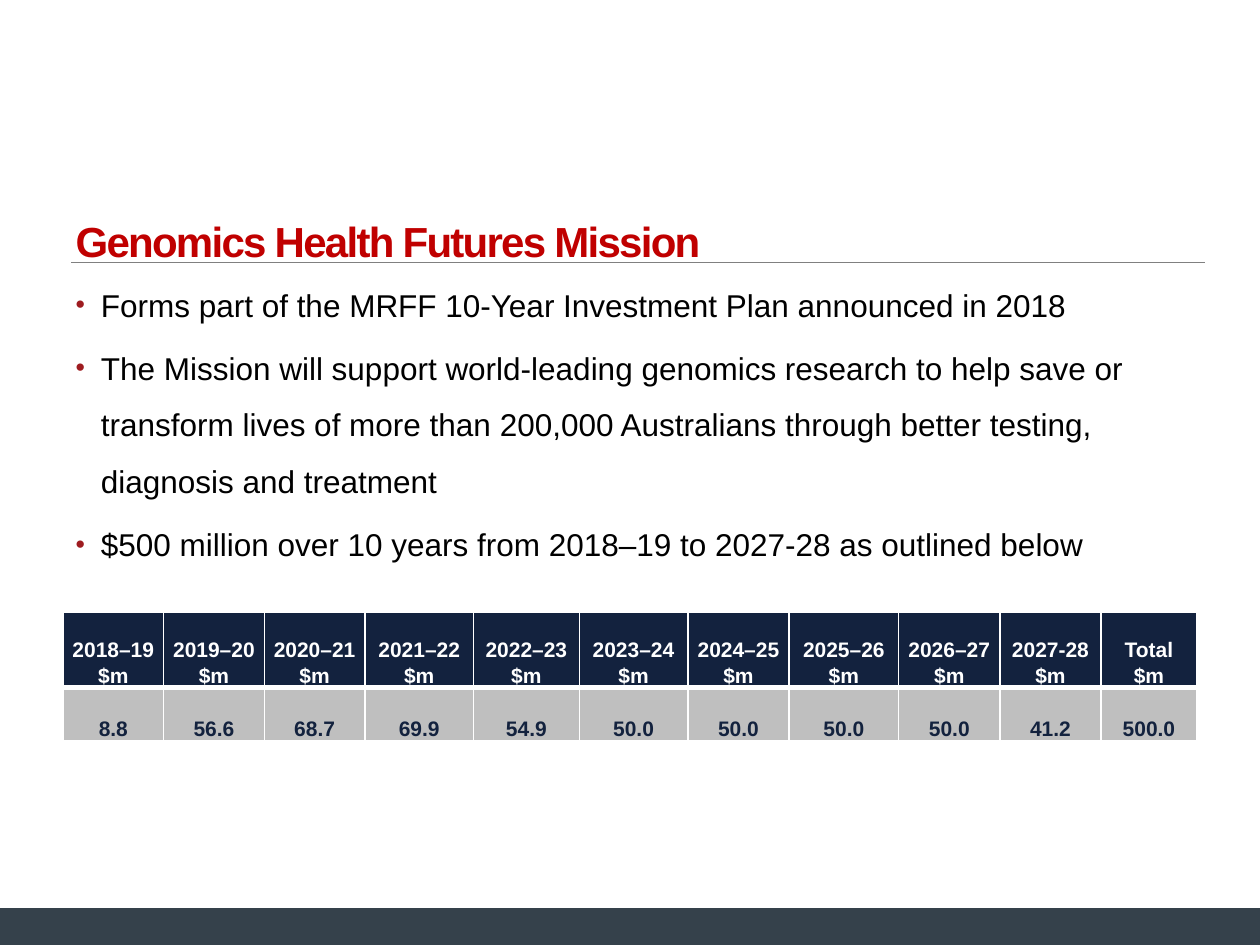
"""Build the Genomics Health Futures Mission funding slide."""
from lxml.etree import SubElement
from pptx import Presentation
from pptx.dml.color import RGBColor
from pptx.enum.shapes import MSO_CONNECTOR, MSO_SHAPE
from pptx.enum.text import MSO_ANCHOR, MSO_AUTO_SIZE, PP_ALIGN
from pptx.oxml.ns import qn
from pptx.util import Cm, Pt

NAVY = RGBColor(0x13, 0x22, 0x3E)
RED = RGBColor(0xC0, 0x00, 0x00)
SLATE = RGBColor(0x35, 0x41, 0x4B)
GREY = RGBColor(0x80, 0x80, 0x80)
SILVER = RGBColor(0xBF, 0xBF, 0xBF)
WHITE = RGBColor(0xFF, 0xFF, 0xFF)
BLACK = RGBColor(0x00, 0x00, 0x00)
BULLET_RED = RGBColor(0x9E, 0x1C, 0x20)

TITLE = "Genomics Health Futures Mission"
POINTS = [
    "Forms part of the MRFF 10-Year Investment Plan announced in 2018",
    "The Mission will support world-leading genomics research to help save or "
    "transform lives of more than 200,000 Australians through better testing, "
    "diagnosis and treatment",
    "$500 million over 10 years from 2018–19 to 2027-28 as outlined below",
]
FUNDING = [
    ("2018–19", "8.8", 2.03),
    ("2019–20", "56.6", 2.03),
    ("2020–21", "68.7", 2.03),
    ("2021–22", "69.9", 2.19),
    ("2022–23", "54.9", 2.13),
    ("2023–24", "50.0", 2.19),
    ("2024–25", "50.0", 2.04),
    ("2025–26", "50.0", 2.21),
    ("2026–27", "50.0", 2.04),
    ("2027-28", "41.2", 2.04),
    ("Total", "500.0", 1.93),
]
UNIT = "$m"
ROW_HEIGHTS = (1.52, 1.07)
LEFT, WIDTH = 1.27, 22.86


def place(sp, left, top, width, height):
    sp.left, sp.top, sp.width, sp.height = Cm(left), Cm(top), Cm(width), Cm(height)


def add_text(p, text, size, color, bold=False):
    r = p.add_run()
    r.text = text
    r.font.size, r.font.name, r.font.bold = Pt(size), "Arial", bold
    r.font.color.rgb = color
    return r


def add_bullet(p):
    pPr = p._p.get_or_add_pPr()
    pPr.set("marL", str(Cm(0.51)))
    pPr.set("indent", str(-Cm(0.51)))
    SubElement(SubElement(pPr, qn("a:buClr")), qn("a:srgbClr"), val=str(BULLET_RED))
    SubElement(pPr, qn("a:buSzPct"), val="85000")
    SubElement(pPr, qn("a:buFont"), typeface="Arial")
    SubElement(pPr, qn("a:buChar"), char="•")


def add_border(cell, side, width):
    tcPr = cell._tc.get_or_add_tcPr()
    ln = SubElement(tcPr, qn(f"a:{side}"), w=str(Pt(width)))
    SubElement(SubElement(ln, qn("a:solidFill")), qn("a:srgbClr"), val=str(WHITE))


def fill_cell(cell, lines, fill, color):
    cell.fill.solid()
    cell.fill.fore_color.rgb = fill
    cell.vertical_anchor = MSO_ANCHOR.BOTTOM
    cell.margin_left = cell.margin_right = Cm(0.18)
    cell.margin_top, cell.margin_bottom = Cm(0.03), 0
    p = cell.text_frame.paragraphs[0]
    p.alignment, p.line_spacing, p.space_after = PP_ALIGN.CENTER, 1.07, Pt(8)
    for i, line in enumerate(lines):
        if i:
            p.add_line_break()
        add_text(p, line, 12, color, bold=True)


def add_master_parts(shapes):
    band = shapes.add_shape(MSO_SHAPE.RECTANGLE, 0, Cm(18.31), Cm(25.4), Cm(0.74))
    band.shadow.inherit = False
    band.fill.solid()
    band.fill.fore_color.rgb = SLATE
    band.line.fill.background()

    rule = shapes.add_connector(MSO_CONNECTOR.STRAIGHT, Cm(1.44), Cm(5.29), Cm(24.3), Cm(5.29))
    rule.line.color.rgb, rule.line.width = GREY, Pt(0.5)
    SubElement(rule._element.spPr, qn("a:effectLst"))


def add_title(title):
    place(title, LEFT, 2.74, WIDTH, 2.74)
    tf = title.text_frame
    tf.vertical_anchor, tf.auto_size = MSO_ANCHOR.BOTTOM, MSO_AUTO_SIZE.NONE
    p = tf.paragraphs[0]
    p.alignment = PP_ALIGN.LEFT
    r = add_text(p, TITLE, 24, RED, bold=True)
    r.font._element.set("spc", "-100")


def add_points(body):
    place(body, LEFT, 5.25, WIDTH, 8.71)
    tf = body.text_frame
    tf.auto_size = MSO_AUTO_SIZE.NONE
    for i, text in enumerate(POINTS):
        p = tf.add_paragraph() if i else tf.paragraphs[0]
        p.line_spacing, p.space_before = 1.5, Pt(3.6 if i else 0)
        add_bullet(p)
        add_text(p, text, 18, BLACK)


def add_funding(shapes):
    frame = shapes.add_table(2, len(FUNDING), Cm(LEFT), Cm(12.34), Cm(WIDTH), Cm(sum(ROW_HEIGHTS)))
    table = frame.table
    table.horz_banding = False
    for row, height in zip(table.rows, ROW_HEIGHTS):
        row.height = Cm(height)
    for col, (year, amount, width) in enumerate(FUNDING):
        table.columns[col].width = Cm(width)
        head, value = table.cell(0, col), table.cell(1, col)
        add_border(head, "lnB", 3)
        add_border(value, "lnT", 3)
        fill_cell(head, (year, UNIT), NAVY, WHITE)
        fill_cell(value, (amount,), SILVER, NAVY)


def main():
    prs = Presentation()
    prs.slide_width, prs.slide_height = Cm(25.4), Cm(19.05)
    s = prs.slides.add_slide(prs.slide_layouts[1])
    add_master_parts(s.shapes)
    add_title(s.shapes.title)
    add_points(s.placeholders[1])
    add_funding(s.shapes)
    prs.save("out.pptx")


if __name__ == "__main__":
    main()
